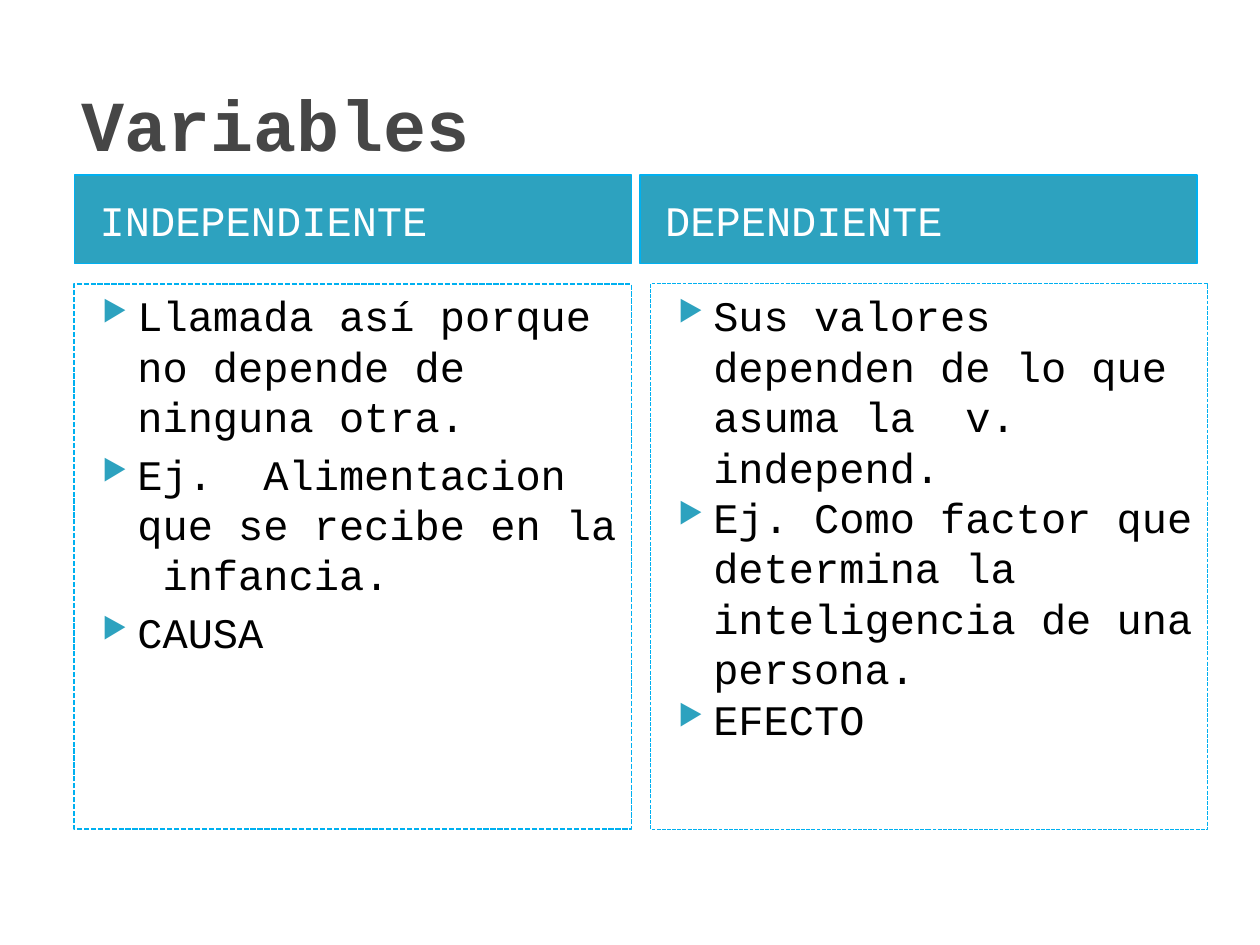
from lxml.etree import SubElement
from pptx import Presentation
from pptx.dml.color import RGBColor
from pptx.enum.dml import MSO_LINE
from pptx.enum.shapes import MSO_SHAPE
from pptx.enum.text import MSO_ANCHOR, PP_ALIGN
from pptx.oxml.ns import qn
from pptx.util import Cm, Pt

FONT = "Courier New"
COLORS = {"title": "464646", "band": "2DA2BF", "edge": "00B0F0",
          "light": "FFFFFF", "text": "000000"}
WIDTH = 11.23


def color(name):
    return RGBColor.from_string(COLORS[name])


def style(para, size, name, bold=False):
    para.alignment = PP_ALIGN.LEFT
    font = para.font
    font.name, font.size, font.bold = FONT, Pt(size), bold
    font.color.rgb = color(name)


def bullet(para):
    props = para._p.get_or_add_pPr()
    props.set("marL", str(Cm(1.02)))
    props.set("indent", str(Cm(-0.71)))
    tint = SubElement(props, qn("a:buClr"))
    SubElement(tint, qn("a:srgbClr"), val=COLORS["band"])
    SubElement(props, qn("a:buSzPct"), val="68000")
    SubElement(props, qn("a:buChar"), char="▶")


def add_box(slide, box, weight):
    shape = slide.shapes.add_shape(MSO_SHAPE.RECTANGLE, *map(Cm, box))
    shape.shadow.inherit = False
    shape.line.color.rgb = color("edge")
    shape.line.width = Pt(weight)
    shape.text_frame.word_wrap = True
    return shape


def add_title(slide, box, text):
    frame = slide.shapes.add_textbox(*map(Cm, box)).text_frame
    frame.word_wrap = True
    frame.vertical_anchor = MSO_ANCHOR.MIDDLE
    frame.text = text
    style(frame.paragraphs[0], 41, "title", bold=True)


def add_header(slide, box, text):
    shape = add_box(slide, box, 0.75)
    shape.fill.solid()
    shape.fill.fore_color.rgb = color("band")
    frame = shape.text_frame
    frame.margin_left = Cm(0.51)
    frame.vertical_anchor = MSO_ANCHOR.MIDDLE
    frame.text = text
    style(frame.paragraphs[0], 24, "light")


def add_list(slide, box, items, weight, gap):
    shape = add_box(slide, box, weight)
    shape.fill.background()
    shape.line.dash_style = MSO_LINE.SQUARE_DOT
    frame = shape.text_frame
    frame.vertical_anchor = MSO_ANCHOR.TOP
    frame.text = "\n".join(items)
    for i, para in enumerate(frame.paragraphs):
        bullet(para)
        para.space_before = Pt(gap if i else 0)
        style(para, 24, "text")


def main():
    deck = Presentation()
    deck.slide_width, deck.slide_height = Cm(25.4), Cm(19.05)
    slide = deck.slides.add_slide(deck.slide_layouts[6])

    add_title(slide, (1.4, 1.42, 21.59, 2.11), "Variables")

    # Columns: header left, list left, heading, items, line weight, gap
    columns = [
        (1.5, 1.5, "INDEPENDIENTE",
         ["Llamada así porque no depende de ninguna otra.",
          "Ej.  Alimentacion que se recibe en la  infancia.",
          "CAUSA"], 1, 4),
        (12.9, 13.11, "DEPENDIENTE",
         ["Sus valores dependen de lo que asuma la  v. independ.",
          "Ej. Como factor que determina la inteligencia de una persona.",
          "EFECTO"], 0.75, 0),
    ]
    for head, left, text, items, weight, gap in columns:
        add_header(slide, (head, 3.53, WIDTH, 1.78), text)
        add_list(slide, (left, 5.72, WIDTH, 11), items, weight, gap)

    deck.save("out.pptx")


if __name__ == "__main__":
    main()
